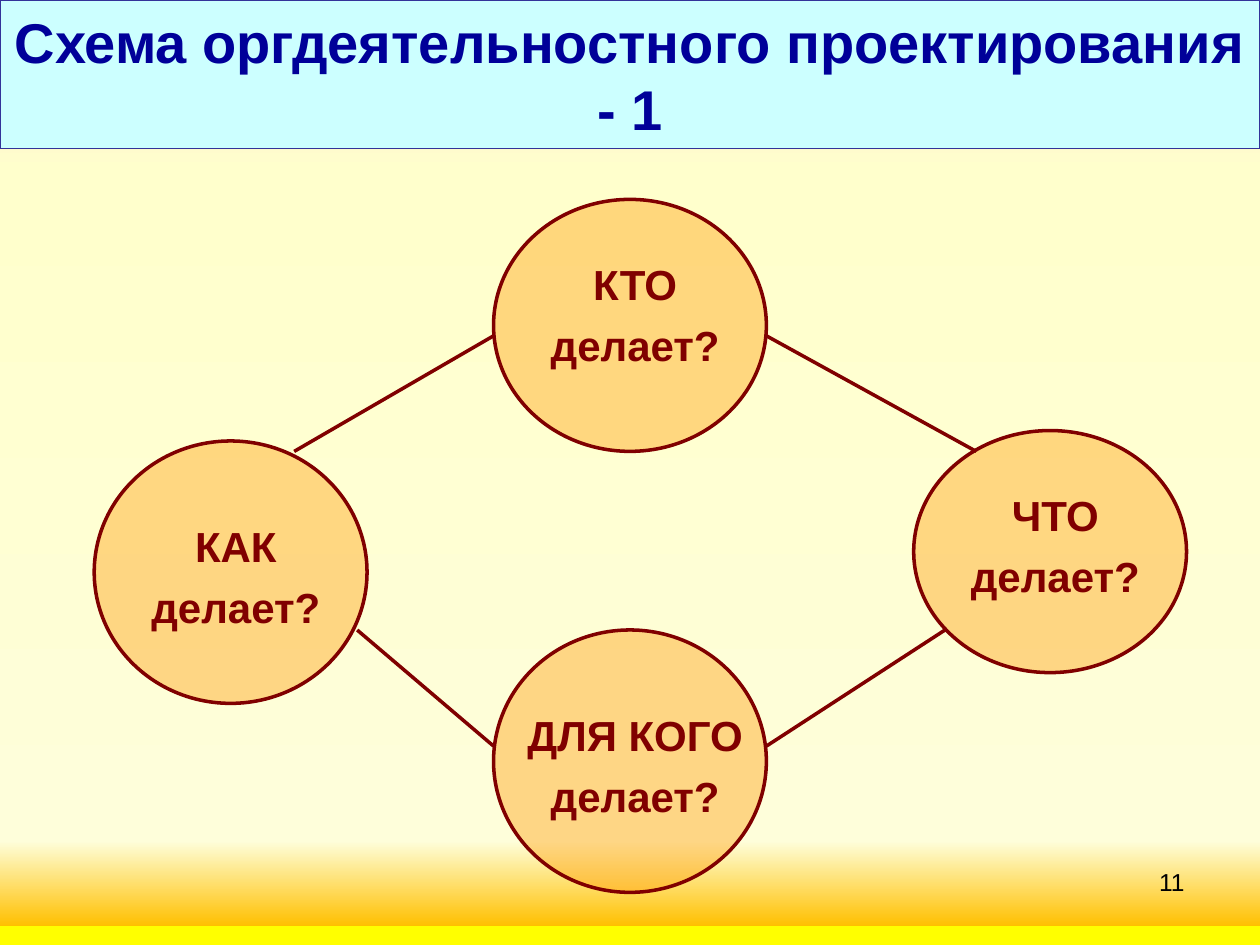
from lxml import etree
from pptx import Presentation
from pptx.dml.color import RGBColor
from pptx.enum.shapes import MSO_CONNECTOR, MSO_SHAPE
from pptx.enum.text import MSO_ANCHOR, PP_ALIGN
from pptx.oxml.ns import qn
from pptx.util import Cm, Pt

RECT, OVAL = MSO_SHAPE.RECTANGLE, MSO_SHAPE.OVAL
STRAIGHT = MSO_CONNECTOR.STRAIGHT
CENTER, RIGHT = PP_ALIGN.CENTER, PP_ALIGN.RIGHT
TOP, MIDDLE = MSO_ANCHOR.TOP, MSO_ANCHOR.MIDDLE


class Theme:
    font = "Arial"
    title_size, label_size, number_size = Pt(32), Pt(24), Pt(14)
    title_fill = RGBColor.from_string("CCFFFF")
    title_line = RGBColor.from_string("333399")
    title_text = RGBColor.from_string("000099")
    circle_fill = RGBColor.from_string("FF9900")
    circle_alpha = 39
    maroon = RGBColor.from_string("800000")
    black = RGBColor.from_string("000000")
    gradient = [(1, "FFD9D9"), (18, "FFFFCC"), (89, "FEFEDA"), (98, "FFC000"), (98, "FFFF00")]


def add_lines(sp, lines, size, color, bold, align, anchor, spacing):
    tf = sp.text_frame
    tf.word_wrap = True
    tf.vertical_anchor = anchor
    for i, (text, gap) in enumerate(zip(lines, spacing)):
        p = tf.add_paragraph() if i else tf.paragraphs[0]
        p.alignment = align
        p.space_before = Pt(gap)
        r = p.add_run()
        r.text = text
        r.font.name = Theme.font
        r.font.size = size
        r.font.bold = bold
        r.font.color.rgb = color


def add_outlined(shape, box, fill, line, width):
    sp = s.shapes.add_shape(shape, *[Cm(v) for v in box])
    sp.shadow.inherit = False
    sp.fill.solid()
    sp.fill.fore_color.rgb = fill
    sp.line.color.rgb = line
    sp.line.width = Pt(width)
    return sp


prs = Presentation()
prs.slide_width, prs.slide_height = Cm(25.4), Cm(19.05)
s = prs.slides.add_slide(prs.slide_layouts[6])

s.background.fill.gradient()
grad = s.background._cSld.find(".//" + qn("a:gradFill"))
stops = grad.find(qn("a:gsLst"))
for stop in list(stops):
    stops.remove(stop)
for pos, color in Theme.gradient:
    stop = etree.SubElement(stops, qn("a:gs"), pos=str(pos * 1000))
    etree.SubElement(stop, qn("a:srgbClr"), val=color)
grad.find(qn("a:lin")).set("ang", "5400000")

number = s.shapes.add_textbox(Cm(18.2), Cm(17.35), Cm(5.93), Cm(1.32))
add_lines(number, ["11"], Theme.number_size, Theme.black, False, RIGHT, TOP, [0])

title = add_outlined(RECT, (0, 0, 25.4, 3), Theme.title_fill, Theme.title_line, 0.75)
add_lines(title, ["Схема оргдеятельностного проектирования - 1"],
          Theme.title_size, Theme.title_text, True, CENTER, MIDDLE, [0])

questions = [
    ("КТО", 9.95, 4.02, 5.08, 1.06),
    ("ЧТО", 18.42, 8.68, 4.88, 1.06),
    ("ДЛЯ КОГО", 9.95, 12.7, 5.29, 1.48),
    ("КАК", 1.9, 8.89, 5.29, 1.48),
]
for word, x, y, height, drop in questions:
    circle = add_outlined(OVAL, (x, y, 5.5, height), Theme.circle_fill, Theme.maroon, 2)
    color = circle.fill._xPr.find(".//" + qn("a:srgbClr"))
    etree.SubElement(color, qn("a:alpha"), val=str(Theme.circle_alpha * 1000))
    label = s.shapes.add_textbox(Cm(x + 0.21), Cm(y + drop), Cm(5.29), Cm(2.49))
    add_lines(label, [word, "делает?"], Theme.label_size, Theme.maroon, True, CENTER, TOP, [3, 6])

links = [
    (15.45, 15.04, 19.05, 12.7),
    (15.45, 6.77, 19.68, 9.1),
    (9.95, 6.77, 5.93, 9.1),
    (9.95, 15.04, 7.2, 12.7),
]
for ends in links:
    link = s.shapes.add_connector(STRAIGHT, *[Cm(v) for v in ends])
    link.line.color.rgb = Theme.maroon
    link.line.width = Pt(2)
    etree.SubElement(link._element.spPr, qn("a:effectLst"))

prs.save("out.pptx")
